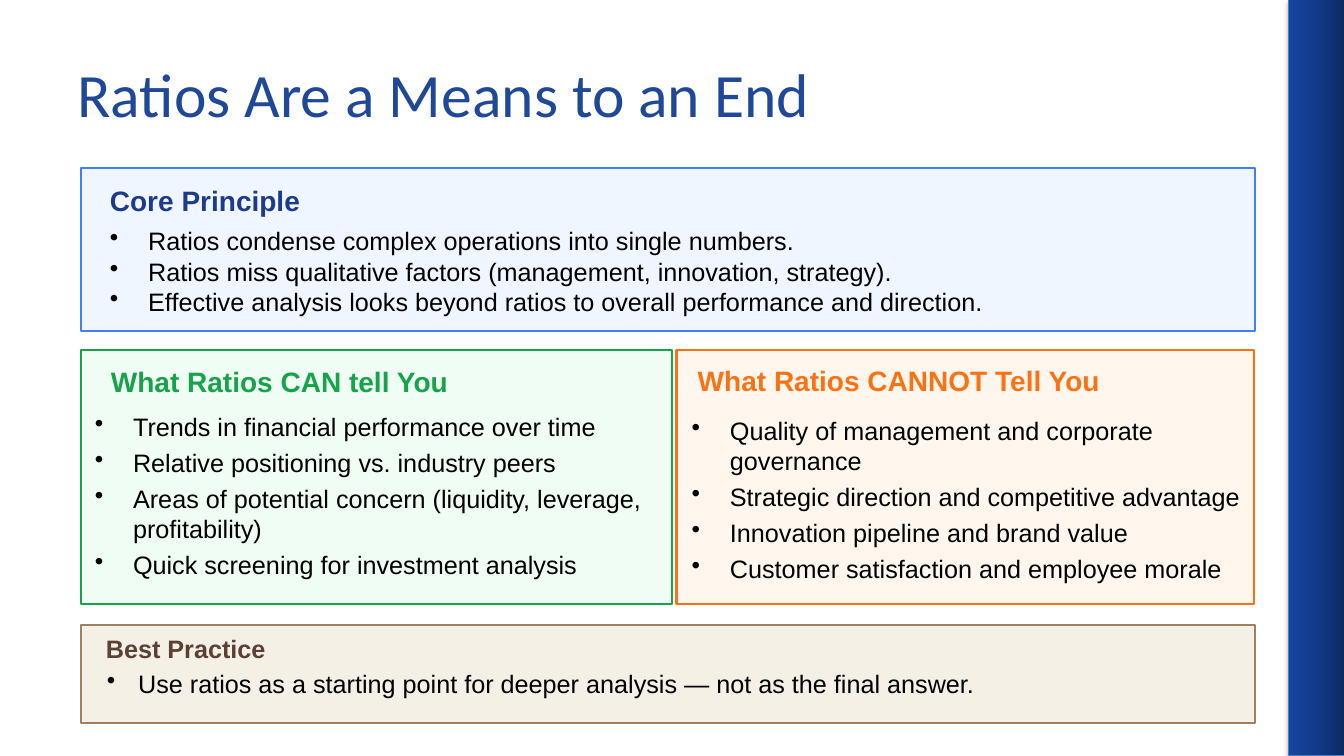
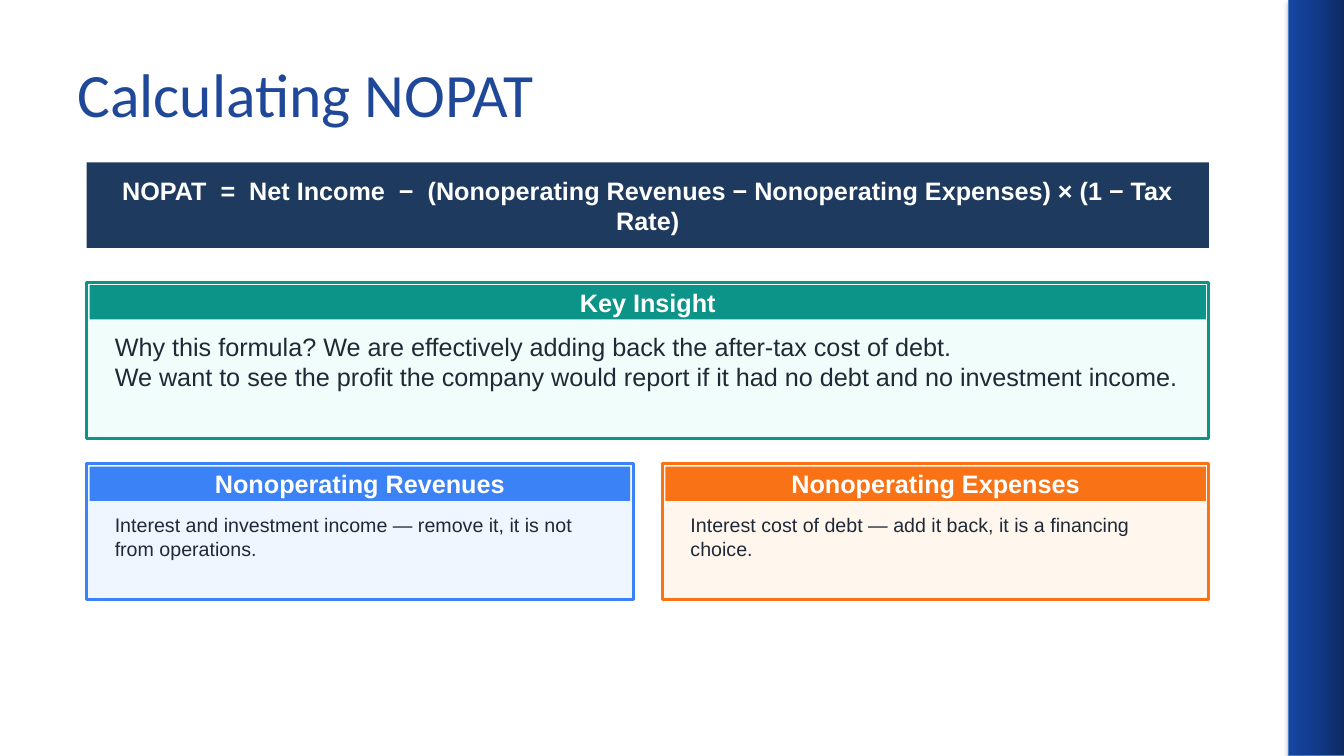
import copy

import pptx
import pptx.dml.color
import pptx.enum.shapes
import pptx.enum.text
import pptx.oxml
import pptx.oxml.ns
import pptx.util

Inches = pptx.util.Inches
Pt = pptx.util.Pt
ALIGN = pptx.enum.text.PP_ALIGN
ANCHOR = pptx.enum.text.MSO_ANCHOR
RECT = pptx.enum.shapes.MSO_SHAPE.RECTANGLE

TITLE_BLUE = "1F4899"
BLACK, WHITE, SLATE, NAVY = "000000", "FFFFFF", "1F2937", "1E3A5F"
BLUE, BLUE_TINT, BLUE_DARK = "3B82F6", "EFF6FF", "1E3A8A"
GREEN, GREEN_TINT = "16A34A", "F0FDF4"
ORANGE, ORANGE_TINT = "F97316", "FFF7ED"
TEAL, TEAL_TINT = "0D9488", "F0FDFA"
BROWN, BROWN_TINT, BROWN_DARK = "A08060", "F5F0E6", "5C4033"
BAND_STOPS = ((0, "0D2960"), (0.5, "123A89"), (1, "1645A2"))
BAND_SHADOW = (
    '<a:effectLst xmlns:a="http://schemas.openxmlformats.org/drawingml/2006/main">'
    '<a:outerShdw blurRad="40000" dist="23000" dir="5400000" rotWithShape="0">'
    '<a:srgbClr val="000000"><a:alpha val="35000"/></a:srgbClr>'
    '</a:outerShdw></a:effectLst>'
)


def rgb(code):
    return pptx.dml.color.RGBColor.from_string(code)


def add_rect(slide, box, fill=None, line=None, weight=1.5):
    sp = slide.shapes.add_shape(RECT, *map(Inches, box))
    sp.shadow.inherit = False
    if fill:
        sp.fill.solid()
        sp.fill.fore_color.rgb = rgb(fill)
    if line:
        sp.line.color.rgb = rgb(line)
        sp.line.width = Pt(weight)
    else:
        sp.line.fill.background()
    return sp


def add_bullet(p, indent):
    pPr = p._p.get_or_add_pPr()
    pPr.set("marL", str(Inches(indent)))
    pPr.set("indent", str(-Inches(indent)))
    bu = pptx.oxml.parse_xml(
        '<a:buChar xmlns:a="http://schemas.openxmlformats.org/drawingml/2006/main" char="•"/>'
    )
    pPr.append(bu)


def add_text(slide, box, lines, size, color, bold=False, font="Arial",
             align=ALIGN.LEFT, anchor=ANCHOR.TOP, inset=(0.1, 0.05),
             indent=0, after=0):
    tf = slide.shapes.add_textbox(*map(Inches, box)).text_frame
    tf.word_wrap = True
    tf.vertical_anchor = anchor
    tf.margin_left = tf.margin_right = Inches(inset[0])
    tf.margin_top = tf.margin_bottom = Inches(inset[1])
    for i, line in enumerate(lines):
        p = tf.paragraphs[0] if i == 0 else tf.add_paragraph()
        p.alignment = align
        p.space_after = Pt(after)
        if indent:
            add_bullet(p, indent)
        r = p.add_run()
        r.text = line
        r.font.name = font
        r.font.size = Pt(size)
        r.font.bold = bold
        r.font.color.rgb = rgb(color)


def add_side_band(slide):
    sp = add_rect(slide, (12.78, 0, 0.56, 7.5), line="4B7EBC", weight=0.75)
    sp.fill.gradient()
    sp.fill.gradient_angle = 180
    spPr = sp._element.spPr
    stops = spPr.find(".//" + pptx.oxml.ns.qn("a:gsLst"))
    stops.insert(1, copy.deepcopy(stops[0]))
    for stop, (position, color) in zip(sp.fill.gradient_stops, BAND_STOPS):
        stop.position = position
        stop.color.rgb = rgb(color)
    effects = spPr.find(pptx.oxml.ns.qn("a:effectLst"))
    spPr.replace(effects, pptx.oxml.parse_xml(BAND_SHADOW))


def new_slide(prs, title):
    slide = prs.slides.add_slide(prs.slide_layouts[6])
    add_side_band(slide)
    add_text(slide, (0.67, 0.3, 12, 1.25), [title], 44, TITLE_BLUE,
             font="Calibri", anchor=ANCHOR.MIDDLE)
    return slide


def bullet_panel(slide, box, colors, heading, bullets, head_at, body_at,
                 head_size=20, indent=0.38, after=0):
    left, top, width, height = box
    fill, line, head_color = colors
    add_rect(slide, box, fill, line)
    for (dx, dy), h, lines, style in (
        (head_at, 0.35, [heading],
         dict(size=head_size, color=head_color, bold=True)),
        (body_at, height - body_at[1], bullets,
         dict(size=18, color=BLACK, indent=indent, after=after)),
    ):
        add_text(slide, (left + dx, top + dy, width - dx - 0.1, h), lines,
                 inset=(0, 0), **style)


def header_card(slide, box, fill, accent, heading, lines, size):
    left, top, width, height = box
    add_rect(slide, box, fill, accent, 2)
    header = (left + 0.03, top + 0.03, width - 0.06, 0.34)
    add_rect(slide, header, accent)
    add_text(slide, header, [heading], 18, WHITE, bold=True,
             align=ALIGN.CENTER, anchor=ANCHOR.MIDDLE)
    add_text(slide, (left + 0.18, top + 0.44, width - 0.36, height - 0.52),
             lines, size, SLATE)


def formula_bar(slide, box, formula):
    left, top, width, height = box
    add_rect(slide, box, NAVY)
    add_text(slide, (left + 0.2, top, width - 0.4, height), [formula], 18,
             WHITE, bold=True, align=ALIGN.CENTER, anchor=ANCHOR.MIDDLE)


def ratios_slide(prs):
    slide = new_slide(prs, "Ratios Are a Means to an End")
    bullet_panel(
        slide, (0.8, 1.67, 11.65, 1.61), (BLUE_TINT, BLUE, BLUE_DARK),
        "Core Principle",
        ["Ratios condense complex operations into single numbers.",
         "Ratios miss qualitative factors (management, innovation, strategy).",
         "Effective analysis looks beyond ratios to overall performance and direction."],
        (0.29, 0.15), (0.29, 0.57))
    bullet_panel(
        slide, (0.8, 3.47, 5.87, 2.52), (GREEN_TINT, GREEN, GREEN),
        "What Ratios CAN tell You",
        ["Trends in financial performance over time",
         "Relative positioning vs. industry peers",
         "Areas of potential concern (liquidity, leverage, profitability)",
         "Quick screening for investment analysis"],
        (0.3, 0.15), (0.14, 0.61), after=4)
    bullet_panel(
        slide, (6.71, 3.47, 5.73, 2.52), (ORANGE_TINT, ORANGE, ORANGE),
        "What Ratios CANNOT Tell You",
        ["Quality of management and corporate governance",
         "Strategic direction and competitive advantage",
         "Innovation pipeline and brand value",
         "Customer satisfaction and employee morale"],
        (0.21, 0.14), (0.15, 0.65), after=4)
    bullet_panel(
        slide, (0.8, 6.2, 11.65, 0.97), (BROWN_TINT, BROWN, BROWN_DARK),
        "Best Practice",
        ["Use ratios as a starting point for deeper analysis — not as the final answer."],
        (0.25, 0.08), (0.26, 0.43), head_size=18, indent=0.31)


def nopat_slide(prs):
    slide = new_slide(prs, "Calculating NOPAT")
    left, width, gap = 0.86, 11.13, 0.29
    formula_bar(
        slide, (left, 1.61, width, 0.85),
        "NOPAT  =  Net Income  −  (Nonoperating Revenues − Nonoperating Expenses) × (1 − Tax Rate)")
    header_card(
        slide, (left, 2.8, width, 1.55), TEAL_TINT, TEAL, "Key Insight",
        ["Why this formula? We are effectively adding back the after-tax cost of debt.",
         "We want to see the profit the company would report if it had no debt and no investment income."],
        18)
    half = (width - gap) / 2
    cards = (
        (BLUE_TINT, BLUE, "Nonoperating Revenues",
         "Interest and investment income — remove it, it is not from operations."),
        (ORANGE_TINT, ORANGE, "Nonoperating Expenses",
         "Interest cost of debt — add it back, it is a financing choice."),
    )
    for i, (fill, accent, heading, note) in enumerate(cards):
        header_card(slide, (left + i * (half + gap), 4.6, half, 1.35),
                    fill, accent, heading, [note], 14)


def main():
    prs = pptx.Presentation()
    prs.slide_width = Inches(13.33)
    prs.slide_height = Inches(7.5)
    ratios_slide(prs)
    nopat_slide(prs)
    prs.save("out.pptx")


if __name__ == "__main__":
    main()
